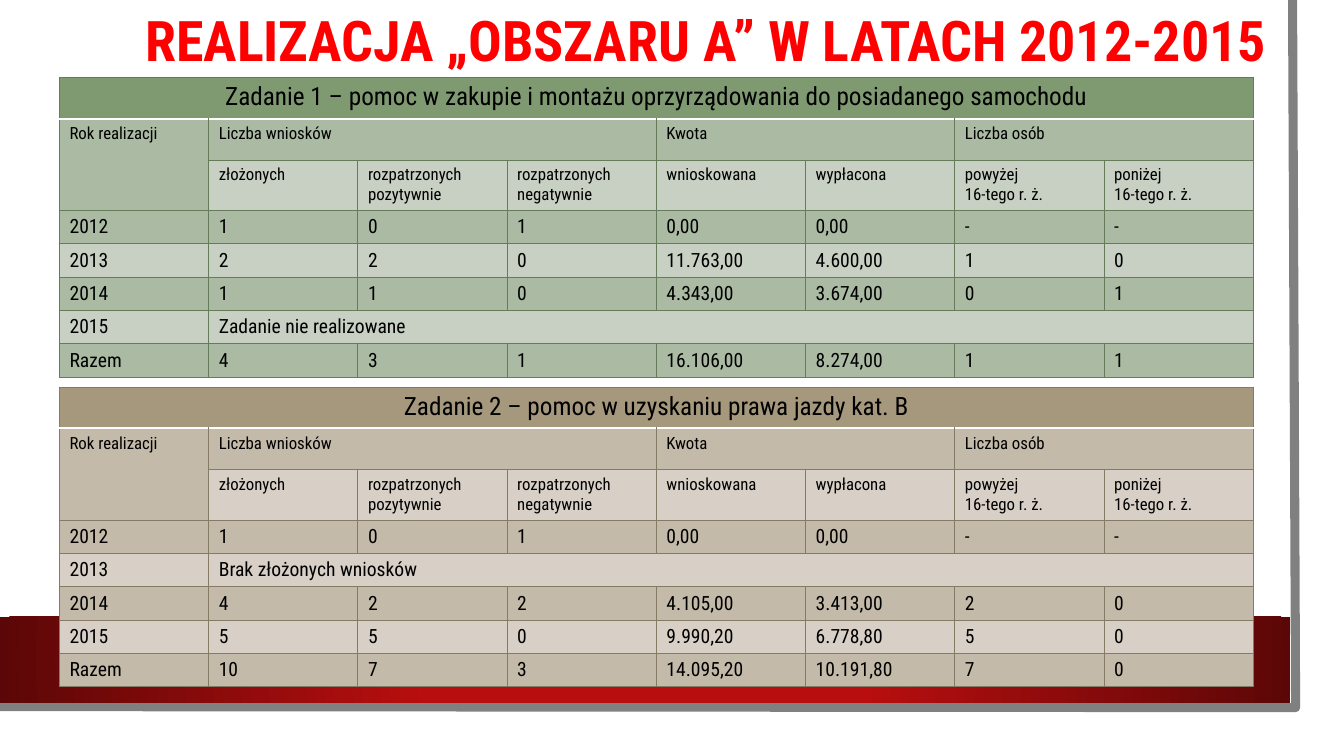
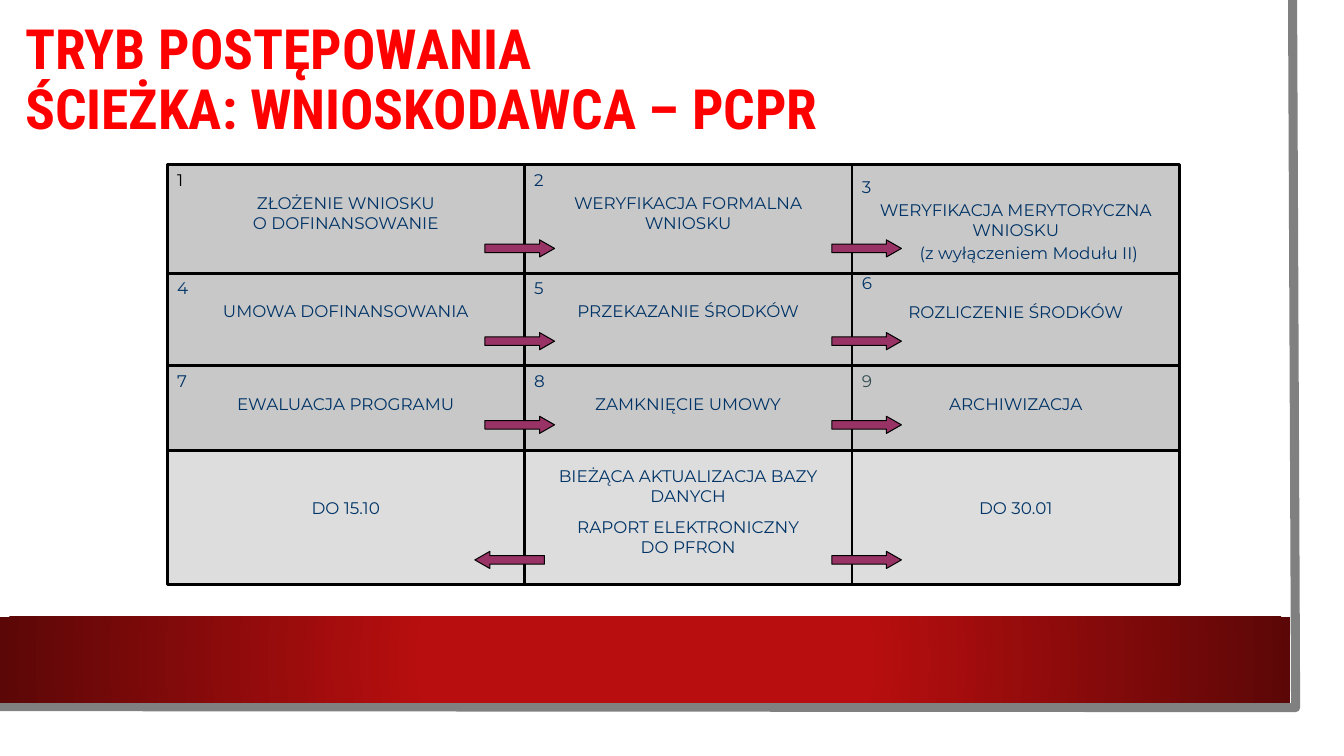
from itertools import product

from lxml import etree
from pptx import Presentation
from pptx import util as u
from pptx.dml.color import RGBColor
from pptx.enum import shapes, text
from pptx.oxml.ns import qn

PX = 9144
COLORS = {
    "title": "FF0000", "frame": "808080", "band": "B80E0F", "band_edge": "5C0707",
    "black": "000000", "white": "FFFFFF", "navy": "003366", "slate": "324B50",
    "step": "C8C8C8", "report": "DDDDDD", "arrow": "993366",
    "green": "7F9A71", "green_line": "667B5A", "green_dark": "ABBAA3", "green_light": "C8D0C4",
    "tan": "A6987D", "tan_line": "857A64", "tan_dark": "C4BAA9", "tan_light": "D8D0C7",
}
TABLE_FONT = "Roboto Condensed"
STEP_FONT = "Montserrat"
LEFT, CENTER = text.PP_ALIGN.LEFT, text.PP_ALIGN.CENTER
TOP, MIDDLE = text.MSO_ANCHOR.TOP, text.MSO_ANCHOR.MIDDLE


def px(length):
    return u.Emu(length * PX)


def rgb(name):
    return RGBColor.from_string(COLORS[name])


class SlideBuilder:
    def __init__(self):
        self.deck = Presentation()
        self.deck.slide_width, self.deck.slide_height = px(1333), px(750)
        self.page = None

    def add_page(self):
        self.page = self.deck.slides.add_slide(self.deck.slide_layouts[5])

    def decorate_master(self):
        builder = self.page.shapes.build_freeform(px(1282), 0)
        builder.add_line_segments([(px(1285), px(702)), (0, px(701))], close=False)
        edge = builder.convert_to_shape()
        edge.shadow.inherit = False
        edge.fill.background()
        edge.line.color.rgb = rgb("frame")
        edge.line.width = u.Pt(6.5)

        band = self.shape(shapes.MSO_SHAPE.RECTANGLE, 0, 612, 1280, 85, "band")
        band.fill.gradient()
        for stop, position, color in zip(band.fill.gradient_stops, (0.34, 1), ("band", "band_edge")):
            stop.position = position
            stop.color.rgb = rgb(color)
        gradient = band._element.spPr.find(qn("a:gradFill"))
        gradient.remove(gradient.find(qn("a:lin")))
        circle = etree.SubElement(gradient, qn("a:path"), {"path": "circle"})
        etree.SubElement(circle, qn("a:fillToRect"), dict.fromkeys("ltrb", "50000"))

        tree = self.deck.slide_master.shapes._spTree
        for index, item in enumerate((edge, band)):
            tree.insert(2 + index, item._element)

    def shape(self, kind, left, top, width, height, fill, line=None, weight=1):
        box = self.page.shapes.add_shape(kind, px(left), px(top), px(width), px(height))
        box.shadow.inherit = False
        box.fill.solid()
        box.fill.fore_color.rgb = rgb(fill)
        if line:
            box.line.color.rgb = rgb(line)
            box.line.width = u.Pt(weight)
        else:
            box.line.fill.background()
        return box

    def fill_para(self, para, content, font, size, color, align=LEFT, bold=False):
        para.alignment = align
        for index, line in enumerate(content.split("\n")):
            if index:
                para.add_line_break()
            span = para.add_run()
            span.text = line
            span.font.name, span.font.size, span.font.bold = font, u.Pt(size), bold
            span.font.color.rgb = rgb(color)

    def title(self, content, left, top, width, height, size=40, anchor=TOP, spacing=1.0):
        box = self.page.shapes.title
        box.left, box.top, box.width, box.height = map(px, (left, top, width, height))
        frame = box.text_frame
        frame.auto_size = text.MSO_AUTO_SIZE.NONE
        frame.word_wrap = True
        frame.vertical_anchor = anchor
        para = frame.paragraphs[0]
        para.line_spacing = spacing
        self.fill_para(para, content, TABLE_FONT, size, "title", bold=True)

    def border(self, cell, sides):
        properties = cell._tc.get_or_add_tcPr()
        for side in ("L", "R", "T", "B"):
            color, weight = sides[side]
            line = etree.SubElement(properties, qn("a:ln" + side), {"w": str(u.Pt(weight))})
            solid = etree.SubElement(line, qn("a:solidFill"))
            etree.SubElement(solid, qn("a:srgbClr"), {"val": COLORS[color]})

    def task_table(self, top, tone, heading, records):
        heights = [41, 41, 50] + [33] * len(records)
        columns = 8
        table = self.page.shapes.add_table(
            len(heights), columns, px(59), px(top), px(148 * columns), px(sum(heights))).table
        table.first_row = table.horz_banding = False
        for row, height in zip(table.rows, heights):
            row.height = px(height)
        for column in table.columns:
            column.width = px(148)

        for row, column in product(range(len(heights)), range(columns)):
            cell = table.cell(row, column)
            sides = dict.fromkeys("LRTB", (tone + "_line", 0.75))
            if row < 2:
                sides["T" if row else "B"] = ("white", 1.5)
            self.border(cell, sides)
            cell.fill.solid()
            shade = "_dark" if row % 2 else "_light"
            cell.fill.fore_color.rgb = rgb(tone + shade if row else tone)

        spans = [(0, 0, 0, 7), (1, 0, 2, 0), (1, 1, 1, 3), (1, 4, 1, 5), (1, 6, 1, 7)]
        spans += [(row, 1, row, 7) for row, record in enumerate(records, 3) if len(record) == 2]
        for first_row, first, last_row, last in spans:
            table.cell(first_row, first).merge(table.cell(last_row, last))

        for row, values in enumerate([[heading], *TABLE_HEAD, *records]):
            size = 18 if row == 0 else 12 if row < 3 else 14
            for column, value in enumerate(values):
                frame = table.cell(row, column).text_frame
                for index, line in enumerate(value.split("\n") if value else []):
                    para = frame.add_paragraph() if index else frame.paragraphs[0]
                    self.fill_para(para, line, TABLE_FONT, size, "black", LEFT if row else CENTER)

    def step_box(self, left, top, width, height, lines, fill="step", number=None,
                 number_color="navy", inset=5, gap=2, indent=0):
        box = self.shape(shapes.MSO_SHAPE.RECTANGLE, left, top, width, height, fill, "black", 2)
        frame = box.text_frame
        frame.word_wrap = True
        frame.vertical_anchor = TOP
        frame.margin_top = px(inset)
        entries = [(line, "navy", CENTER) for line in lines]
        if number:
            entries.insert(0, (str(number), number_color, LEFT))
        for index, (line, color, align) in enumerate(entries):
            para = frame.add_paragraph() if index else frame.paragraphs[0]
            if index:
                para.space_before = u.Pt(gap)
            self.fill_para(para, line, STEP_FONT, 12, color, align)
        if indent:
            para._p.get_or_add_pPr().set("marL", str(px(indent)))

    def arrow(self, left, top, kind=shapes.MSO_SHAPE.RIGHT_ARROW):
        box = self.shape(kind, left, top, 69, 17, "arrow", "black", 0.75)
        box.adjustments[1] = 0.875


TABLE_HEAD = [
    ["Rok realizacji", "Liczba wniosków", "", "", "Kwota", "", "Liczba osób"],
    ["", "złożonych", "rozpatrzonych pozytywnie", "rozpatrzonych negatywnie",
     "wnioskowana", "wypłacona", "powyżej\n16-tego r. ż.", "poniżej\n16-tego r. ż."],
]
CAR_EQUIPMENT = [
    ["2012", "1", "0", "1", "0,00", "0,00", "-", "-"],
    ["2013", "2", "2", "0", "11.763,00", "4.600,00", "1", "0"],
    ["2014", "1", "1", "0", "4.343,00", "3.674,00", "0", "1"],
    ["2015", "Zadanie nie realizowane"],
    ["Razem", "4", "3", "1", "16.106,00", "8.274,00", "1", "1"],
]
DRIVING_LICENCE = [
    ["2012", "1", "0", "1", "0,00", "0,00", "-", "-"],
    ["2013", "Brak złożonych wniosków"],
    ["2014", "4", "2", "2", "4.105,00", "3.413,00", "2", "0"],
    ["2015", "5", "5", "0", "9.990,20", "6.778,80", "5", "0"],
    ["Razem", "10", "7", "3", "14.095,20", "10.191,80", "7", "0"],
]
STEPS = [
    ["ZŁOŻENIE WNIOSKU\nO DOFINANSOWANIE"],
    ["WERYFIKACJA FORMALNA WNIOSKU"],
    ["WERYFIKACJA MERYTORYCZNA WNIOSKU", "(z wyłączeniem Modułu II)"],
    ["UMOWA DOFINANSOWANIA"],
    ["PRZEKAZANIE ŚRODKÓW"],
    ["ROZLICZENIE ŚRODKÓW"],
    ["EWALUACJA PROGRAMU"],
    ["ZAMKNIĘCIE UMOWY"],
    ["ARCHIWIZACJA"],
]
STEP_STYLES = {
    1: {"number_color": "black"},
    3: {"inset": 12, "indent": 26},
    6: {"inset": 0, "gap": 6},
    9: {"number_color": "slate"},
}
REPORTS = [
    (["DO 15.10"], {"inset": 47}),
    (["BIEŻĄCA AKTUALIZACJA BAZY DANYCH", "RAPORT ELEKTRONICZNY\nDO PFRON"],
     {"inset": 15, "gap": 7.5}),
    (["DO 30.01"], {"inset": 47}),
]
COLUMN_EDGES = [166, 520, 845, 1170]
ROW_EDGES = [163, 271, 363, 447, 580]


def results_page(slides):
    slides.title("REALIZACJA „OBSZARU A” W LATACH 2012-2015", 134, 0, 1145, 77)
    slides.task_table(
        77, "green", "Zadanie 1 – pomoc w zakupie i montażu oprzyrządowania do posiadanego samochodu",
        CAR_EQUIPMENT)
    slides.task_table(384, "tan", "Zadanie 2 – pomoc w uzyskaniu prawa jazdy kat. B", DRIVING_LICENCE)


def procedure_page(slides):
    slides.title("TRYB POSTĘPOWANIA\nŚCIEŻKA: WNIOSKODAWCA – PCPR", 15, 18, 1137, 126,
                 size=39.6, anchor=MIDDLE, spacing=0.9)
    cells = [
        (left, top, right - left, bottom - top)
        for (top, bottom), (left, right) in product(
            zip(ROW_EDGES, ROW_EDGES[1:]), zip(COLUMN_EDGES, COLUMN_EDGES[1:]))
    ]
    for number, (area, lines) in enumerate(zip(cells, STEPS), 1):
        slides.step_box(*area, lines, number=number, **STEP_STYLES.get(number, {}))
    for area, (lines, style) in zip(cells[len(STEPS):], REPORTS):
        slides.step_box(*area, lines, fill="report", **style)
    for top, left in product((238, 330, 413), (481, 825)):
        slides.arrow(left, top)
    slides.arrow(471, 547, shapes.MSO_SHAPE.LEFT_ARROW)
    slides.arrow(825, 547)


def main():
    slides = SlideBuilder()
    slides.add_page()
    slides.decorate_master()
    results_page(slides)
    slides.add_page()
    procedure_page(slides)
    slides.deck.save("out.pptx")


if __name__ == "__main__":
    main()
